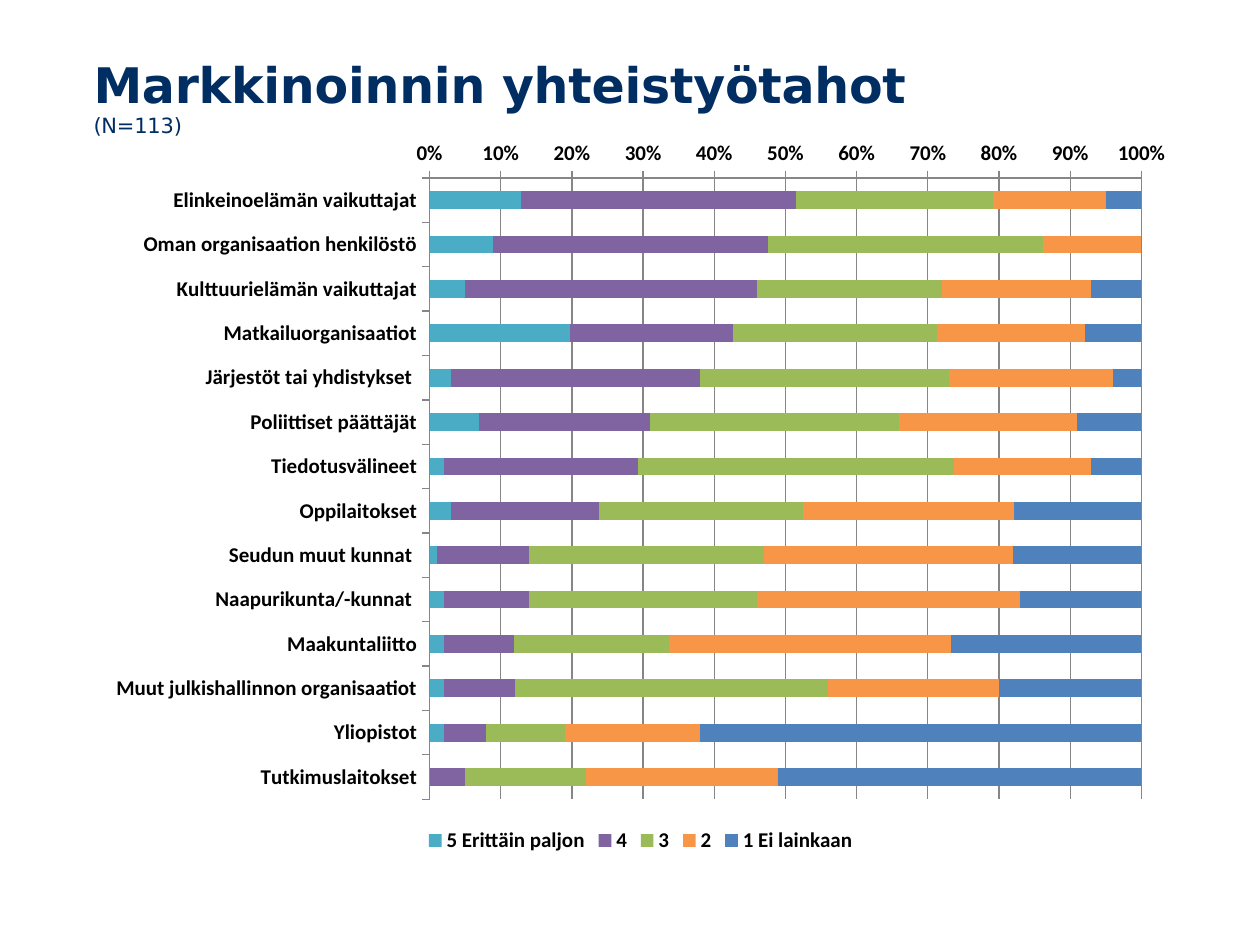
from pptx import Presentation
from pptx.chart.data import CategoryChartData
from pptx.dml.color import RGBColor
from pptx.enum.chart import (XL_CHART_TYPE as ChartType, XL_LEGEND_POSITION as LegendPos,
                             XL_TICK_LABEL_POSITION as LabelPos, XL_TICK_MARK as Tick)
from pptx.util import Pt

COLORS = {
    "title": "002D62", "text": "000000", "axis": "868686",
    "5 Erittäin paljon": "4BACC6", "4": "8064A2", "3": "9BBB59",
    "2": "F79646", "1 Ei lainkaan": "4F81BD",
}

# Partner and its share of answers, from 5 (very much) to 1 (not at all)
PARTNERS = [
    ("Elinkeinoelämän vaikuttajat", 13, 39, 28, 16, 5),
    ("Oman organisaation henkilöstö", 9, 39, 39, 14, 0),
    ("Kulttuurielämän vaikuttajat", 5, 41, 26, 21, 7),
    ("Matkailuorganisaatiot", 20, 23, 29, 21, 8),
    ("Järjestöt tai yhdistykset ", 3, 35, 35, 23, 4),
    ("Poliittiset päättäjät", 7, 24, 35, 25, 9),
    ("Tiedotusvälineet", 2, 27, 44, 19, 7),
    ("Oppilaitokset", 3, 21, 29, 30, 18),
    ("Seudun muut kunnat ", 1, 13, 33, 35, 18),
    ("Naapurikunta/-kunnat ", 2, 12, 32, 37, 17),
    ("Maakuntaliitto", 2, 10, 22, 40, 27),
    ("Muut julkishallinnon organisaatiot", 2, 10, 44, 24, 20),
    ("Yliopistot", 2, 6, 11, 19, 62),
    ("Tutkimuslaitokset", 0, 5, 17, 27, 51),
]
RATINGS = ["5 Erittäin paljon", "4", "3", "2", "1 Ei lainkaan"]


def rgb(name):
    return RGBColor.from_string(COLORS[name])


def add_title_run(paragraph, text, size, bold):
    run = paragraph.add_run()
    run.text = text
    run.font.size = Pt(size)
    run.font.bold = bold
    run._r.get_or_add_rPr().set("spc", "-10")


def add_title(slide, heading, sample):
    frame = slide.shapes.add_textbox(Pt(52.56), Pt(7.2), Pt(614.16), Pt(74.88)).text_frame
    frame.word_wrap = True
    frame.margin_left = frame.margin_right = frame.margin_bottom = 0
    frame.margin_top = Pt(23.76)
    paragraph = frame.paragraphs[0]
    paragraph._p.get_or_add_pPr().set("marL", str(Pt(0.9)))
    add_title_run(paragraph, heading, 28, True)
    paragraph.add_line_break()
    add_title_run(paragraph, sample, 12, False)
    paragraph.font.name = "DejaVu Sans"
    paragraph.font.color.rgb = rgb("title")
    for run in paragraph.runs:
        run.font.name = "DejaVu Sans"
        run.font.color.rgb = rgb("title")


def style_axis(axis):
    axis.major_tick_mark = Tick.OUTSIDE
    axis.minor_tick_mark = Tick.NONE
    axis.tick_label_position = LabelPos.NEXT_TO_AXIS
    axis.format.line.color.rgb = rgb("axis")


def add_partner_chart(slide):
    answers = CategoryChartData()
    partners, *shares = zip(*PARTNERS)
    answers.categories = partners
    for rating, values in zip(RATINGS, shares):
        answers.add_series(rating, values)
    chart = slide.shapes.add_chart(ChartType.BAR_STACKED_100, Pt(54), Pt(72),
                                   Pt(624.24), Pt(418.32), answers).chart
    chart.has_title = False
    chart.font.name = "Calibri"
    chart.font.size = Pt(12)
    chart.font.bold = True
    chart.font.color.rgb = rgb("text")

    # Bars
    plot = chart.plots[0]
    plot.gap_width = 150
    plot.overlap = 100
    plot.vary_by_categories = False
    for series in plot.series:
        series.format.fill.solid()
        series.format.fill.fore_color.rgb = rgb(series.name)

    # Axes: first partner on top, percentages above the bars
    style_axis(chart.category_axis)
    chart.category_axis.reverse_order = True
    share_axis = chart.value_axis
    style_axis(share_axis)
    share_axis.tick_labels.number_format = "0%"
    share_axis.tick_labels.number_format_is_linked = False
    share_axis.has_major_gridlines = True
    share_axis.major_gridlines.format.line.color.rgb = rgb("axis")

    # Legend
    chart.has_legend = True
    chart.legend.position = LegendPos.BOTTOM
    chart.legend.include_in_layout = False


def main():
    prs = Presentation()
    prs.slide_width, prs.slide_height = Pt(720), Pt(540)
    slide = prs.slides.add_slide(prs.slide_layouts[6])
    add_title(slide, "Markkinoinnin yhteistyötahot ", "(N=113)")
    add_partner_chart(slide)
    prs.save("out.pptx")


if __name__ == "__main__":
    main()
